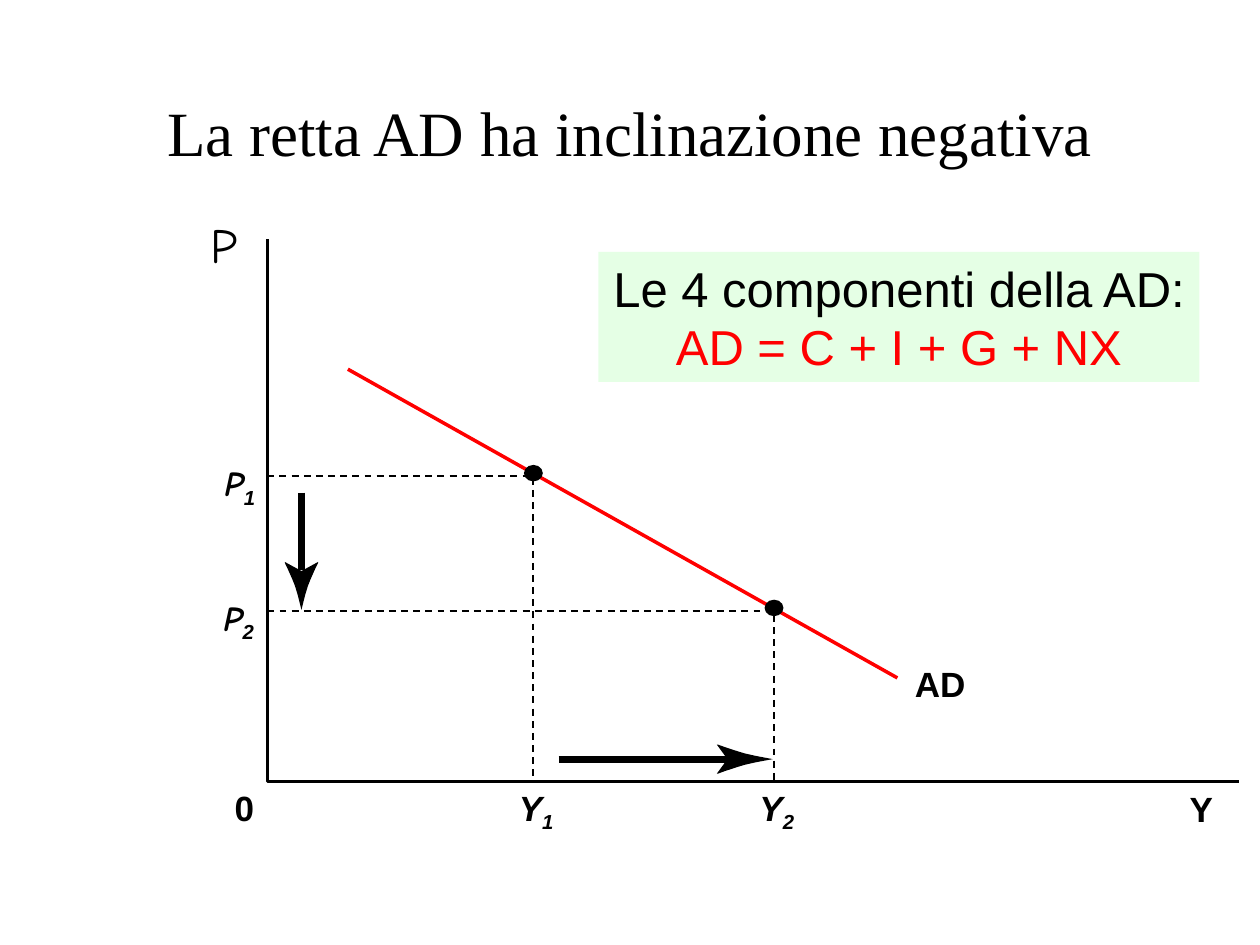
import pptx
import pptx.util
import pptx.dml.color
import pptx.enum.dml
import pptx.enum.shapes
import pptx.enum.text
import pptx.oxml.ns
import lxml.etree
from dataclasses import dataclass

Pt = pptx.util.Pt
qn = pptx.oxml.ns.qn


@dataclass(frozen=True)
class Theme:
    """Colours, fonts and sizes of the slide."""
    ink: str = "000000"
    red: str = "FF0000"
    mint: str = "CCFFCC"
    serif: str = "Times New Roman"
    sans: str = "Arial"
    hand: str = "Comic Neue"
    title: int = 36
    large: int = 28
    label: int = 20
    thin: int = 1
    line: int = 2
    thick: int = 4


T = Theme()
HEAD = [(0, 0), (0.17, 0.12), (0.33, 0.24), (0.5, 0.39), (0.63, 0.54),
        (0.86, 0.83), (0.98, 1), (1, 1)]
NOTCH = (0.81, 0)


def rgb(code):
    """Return a colour from its hex code."""
    return pptx.dml.color.RGBColor.from_string(code)


def style(run, size, face, color, bold=False, slant=False):
    """Format one run."""
    font = run.font
    font.size, font.name = Pt(size), face
    font.bold, font.italic = bold, slant
    font.color.rgb = rgb(color)


def stroke(shape, color, width):
    """Set the colour and width of a line."""
    shape.line.color.rgb = rgb(color)
    shape.line.width = Pt(width)


def path(slide, pts, close=False):
    """Draw a freeform through points, filled if closed."""
    pts = [(Pt(x), Pt(y)) for x, y in pts]
    form = slide.shapes.build_freeform(*pts[0])
    form.add_line_segments(pts[1:], close=close)
    shape = form.convert_to_shape()
    shape.shadow.inherit = False
    if close:
        shape.fill.solid()
        shape.fill.fore_color.rgb = rgb(T.ink)
        shape.line.fill.background()
    else:
        shape.fill.background()
        stroke(shape, T.ink, T.line)
    return shape


def segment(slide, start, end, color, width):
    """Draw a straight line."""
    kind = pptx.enum.shapes.MSO_CONNECTOR.STRAIGHT
    ends = [Pt(v) for v in (*start, *end)]
    line = slide.shapes.add_connector(kind, *ends)
    stroke(line, color, width)
    lxml.etree.SubElement(line._element.spPr, qn("a:effectLst"))


def arrow(slide, start, end, head, half, bare):
    """Draw a thick arrow along one axis with a barbed head."""
    (x, y), (a, b) = start, end
    span = abs(a - x) + abs(b - y)
    u, v = (a - x) / span, (b - y) / span
    segment(slide, start, (a - u * bare, b - v * bare), T.ink, T.thick)
    far = [(p, -q) for p, q in HEAD[:0:-1]]
    path(slide, [(a - u * p * head - v * q * half, b - v * p * head + u * q * half)
                 for p, q in HEAD + [NOTCH] + far], True)


def label(slide, x, y, width, text, sub="", size=T.label, face=T.sans, bold=True):
    """Place a label with an optional subscript."""
    box = slide.shapes.add_textbox(Pt(x), Pt(y), Pt(width), Pt(size * 1.2))
    frame = box.text_frame
    frame.word_wrap = False
    frame.margin_left = frame.margin_right = 0
    frame.margin_top = frame.margin_bottom = 0
    para = frame.paragraphs[0]
    para.text = text
    style(para.runs[0], size, face, T.ink, bold, bool(sub))
    if sub:
        run = para.add_run()
        run.text = sub
        style(run, size, T.sans, T.ink, True, True)
        run.font._element.set("baseline", "-25000")


def title(slide, x, y, w, h):
    """Fill and place the title."""
    shape = slide.shapes.title
    shape.left, shape.top, shape.width, shape.height = Pt(x), Pt(y), Pt(w), Pt(h)
    frame = shape.text_frame
    frame.text = "La retta AD ha inclinazione negativa"
    frame.vertical_anchor = pptx.enum.text.MSO_ANCHOR.MIDDLE
    para = frame.paragraphs[0]
    para.alignment = pptx.enum.text.PP_ALIGN.CENTER
    style(para.runs[0], T.title, T.serif, T.ink)


def graph(slide, x, y, w, h):
    """Draw the axes, demand line, guides, arrows and labels."""
    path(slide, [(x, y), (x, y + h), (x + w, y + h)])
    spots = [("1", 152, 135.4, -24.5, 20), ("2", 289.5, 212.4, -25.2, 23)]
    for sub, dx, dy, left, wide in spots:
        guide = path(slide, [(x, y + dy), (x + dx, y + dy), (x + dx, y + h)])
        stroke(guide, T.ink, T.thin)
        guide.line.dash_style = pptx.enum.dml.MSO_LINE.DASH
        label(slide, x + left, y + dy - 8.6, wide, "P", sub, face=T.hand)
        label(slide, x + dx - 8.3, y + h + 2.6, 22, "Y", sub)
    arrow(slide, (x + 19.5, y + 144.7), (x + 19.5, y + 211.7), 27.4, 9.5, 23)
    arrow(slide, (x + 166.4, y + 297), (x + 288.8, y + 297), 32, 8.3, 21)
    segment(slide, (x + 46, y + 74.2), (x + 360, y + 250.6), T.red, T.line)
    for _, dx, dy, _, _ in spots:
        dot = slide.shapes.add_shape(
            pptx.enum.shapes.MSO_SHAPE.OVAL, Pt(x + dx - 5.4), Pt(y + dy - 6.5),
            Pt(10.8), Pt(9.4))
        dot.shadow.inherit = False
        dot.fill.solid()
        dot.fill.fore_color.rgb = rgb(T.ink)
        dot.line.fill.background()
    label(slide, x - 32.4, y - 14.4, 24.5, "P", size=T.large, face=T.hand, bold=False)
    label(slide, x - 18.7, y + h + 2.6, 12, "0")
    label(slide, x + w - 28, y + h + 3.6, 14, "Y")
    label(slide, x + 370, y + 242, 32, "AD")


def panel(slide, x, y, w, h):
    """Draw the tinted box with the formula."""
    kind = pptx.enum.shapes.MSO_SHAPE.RECTANGLE
    box = slide.shapes.add_shape(kind, Pt(x), Pt(y), Pt(w), Pt(h))
    box.shadow.inherit = False
    box.fill.solid()
    box.fill.fore_color.rgb = rgb(T.mint)
    tint = box._element.spPr.find(qn("a:solidFill"))[0]
    lxml.etree.SubElement(tint, qn("a:alpha")).set("val", "50000")
    box.line.fill.background()
    frame = box.text_frame
    frame.word_wrap = False
    frame.text = "Le 4 componenti della AD:\nAD = C + I + G + NX"
    for para, color in zip(frame.paragraphs, (T.ink, T.red)):
        para.alignment = pptx.enum.text.PP_ALIGN.CENTER
        style(para.runs[0], T.large, T.sans, color)


def main():
    """Build and save the slide."""
    deck = pptx.Presentation()
    deck.slide_width, deck.slide_height = Pt(720), Pt(540)
    slide = deck.slides.add_slide(deck.slide_layouts[5])
    title(slide, 54, 30, 612, 90)
    graph(slide, 152.8, 136.8, 555, 309.8)
    panel(slide, 342, 144, 343.4, 74.2)
    deck.save("out.pptx")


if __name__ == "__main__":
    main()
